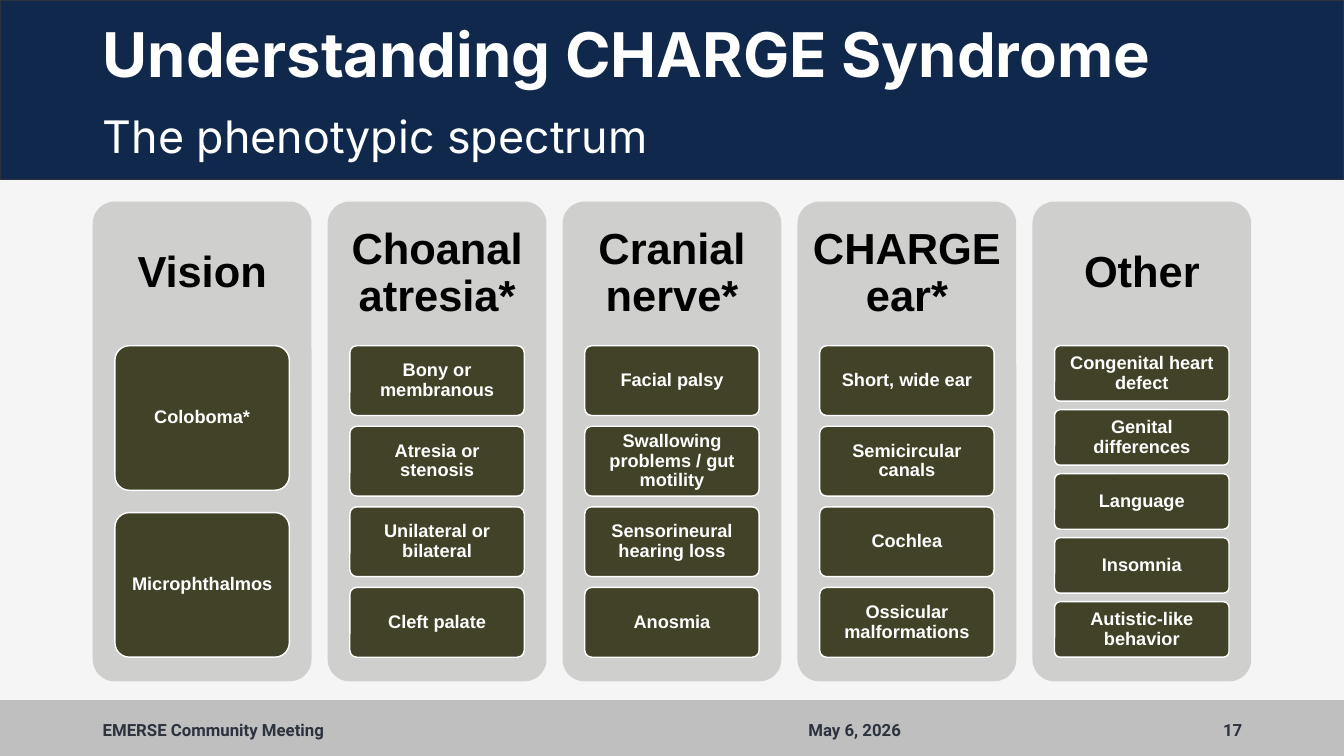
from dataclasses import dataclass

from pptx import Presentation
from pptx.dml.color import RGBColor
from pptx.enum.shapes import MSO_SHAPE
from pptx.enum.text import MSO_ANCHOR, PP_ALIGN
from pptx.util import Inches, Pt

NAVY, INK, OLIVE = "10284B", "2C333F", "414227"
WHITE, BLACK, PANEL, BAR, PAPER = "FFFFFF", "000000", "CFCFCD", "BFBFBF", "F5F5F5"

# Column layout in inches
LEFT, TOP, STEP, WIDTH, HEIGHT = 0.92, 2.0, 2.33, 2.17, 4.76
HEAD, INDENT, STACK, GAP = 1.43, 0.22, 3.09, 0.154


@dataclass
class Box:
    left: float
    top: float
    width: float
    height: float


@dataclass
class Style:
    font: str
    size: float
    color: str
    bold: bool = True
    align: PP_ALIGN = PP_ALIGN.LEFT
    anchor: MSO_ANCHOR = MSO_ANCHOR.MIDDLE
    inset: tuple[float, float] = (0.1, 0.05)
    space: float = 0.9


@dataclass
class Column:
    title: str
    cards: list[str]


@dataclass
class Label:
    text: str
    box: Box
    style: Style


def paint(color, code: str) -> None:
    color.rgb = RGBColor.from_string(code)


def place(box: Box) -> list[int]:
    return [Inches(n) for n in (box.left, box.top, box.width, box.height)]


def assign(target, values: dict) -> None:
    for name, value in values.items():
        setattr(target, name, value)


def write(shape, text: str, style: Style) -> None:
    frame = shape.text_frame
    side, edge = (Inches(n) for n in style.inset)
    assign(frame, {"word_wrap": True, "vertical_anchor": style.anchor,
                   "margin_left": side, "margin_right": side,
                   "margin_top": edge, "margin_bottom": edge})
    para = frame.paragraphs[0]
    assign(para, {"alignment": style.align, "line_spacing": style.space})
    run = para.add_run()
    run.text = text
    assign(run.font, {"name": style.font, "size": Pt(style.size), "bold": style.bold})
    paint(run.font.color, style.color)


def label(slide, item: Label) -> None:
    write(slide.shapes.add_textbox(*place(item.box)), item.text, item.style)


def block(slide, box: Box, fill: str, line: str = "", kind=MSO_SHAPE.RECTANGLE):
    shape = slide.shapes.add_shape(kind, *place(box))
    shape.shadow.inherit = False
    shape.fill.solid()
    paint(shape.fill.fore_color, fill)
    if line:
        paint(shape.line.color, line)
        shape.line.width = Pt(1)
    else:
        shape.line.fill.background()
    if kind == MSO_SHAPE.ROUNDED_RECTANGLE:
        shape.adjustments[0] = 0.1
    return shape


def column(slide, item: Column, left: float) -> None:
    round_ = MSO_SHAPE.ROUNDED_RECTANGLE
    block(slide, Box(left, TOP, WIDTH, HEIGHT), PANEL, kind=round_)
    label(slide, Label(item.title, Box(left, TOP, WIDTH, HEAD), TITLE))
    # Cards share one stack height; the gap is a fixed part of a card
    count = len(item.cards)
    height = STACK / (count + GAP * (count - 1))
    for row, text in enumerate(item.cards):
        top = TOP + HEAD + row * height * (1 + GAP)
        box = Box(left + INDENT, top, WIDTH - 2 * INDENT, height)
        write(block(slide, box, OLIVE, WHITE, round_), text, CARD)


# Text styles
TITLE = Style("Arial", 31, BLACK, align=PP_ALIGN.CENTER, inset=(0.13, 0.13))
CARD = Style("Arial", 13, WHITE, align=PP_ALIGN.CENTER, inset=(0.05, 0.03))
FOOT = Style("Roboto", 12, INK, space=1.0)
PAGE = Style("Roboto", 12, INK, align=PP_ALIGN.RIGHT, space=1.0)

# Content
COLUMNS = [
    Column("Vision", ["Coloboma*", "Microphthalmos"]),
    Column("Choanal atresia*", ["Bony or membranous", "Atresia or stenosis",
                                "Unilateral or bilateral", "Cleft palate"]),
    Column("Cranial nerve*", ["Facial palsy", "Swallowing problems / gut motility",
                              "Sensorineural hearing loss", "Anosmia"]),
    Column("CHARGE ear*", ["Short, wide ear", "Semicircular canals",
                           "Cochlea", "Ossicular malformations"]),
    Column("Other", ["Congenital heart defect", "Genital differences",
                     "Language", "Insomnia", "Autistic-like behavior"]),
]
LABELS = [
    Label("Understanding CHARGE Syndrome", Box(LEFT, 0.15, 11.5, 0.85),
          Style("Inter", 44, WHITE)),
    Label("The phenotypic spectrum", Box(LEFT, 1.09, 11.5, 0.63),
          Style("Inter", 32, WHITE, bold=False, anchor=MSO_ANCHOR.TOP)),
    Label("EMERSE Community Meeting", Box(LEFT, 7.04, 6.86, 0.4), FOOT),
    Label("May 6, 2026", Box(7.92, 7.04, 2.76, 0.4), FOOT),
    Label("17", Box(10.82, 7.04, 1.6, 0.4), PAGE),
]


def main() -> None:
    deck = Presentation()
    assign(deck, {"slide_width": Inches(13.33), "slide_height": Inches(7.5)})
    slide = deck.slides.add_slide(deck.slide_layouts[6])
    slide.background.fill.solid()
    paint(slide.background.fill.fore_color, PAPER)

    # Footer and header bands
    block(slide, Box(0, 6.95, 13.33, 0.55), BAR, BAR)
    block(slide, Box(0, 0, 13.33, 1.78), NAVY, INK)

    # Columns of cards
    for index, item in enumerate(COLUMNS):
        column(slide, item, LEFT + index * STEP)

    # Title, subtitle and footer text
    for item in LABELS:
        label(slide, item)
    deck.save("out.pptx")


if __name__ == "__main__":
    main()
